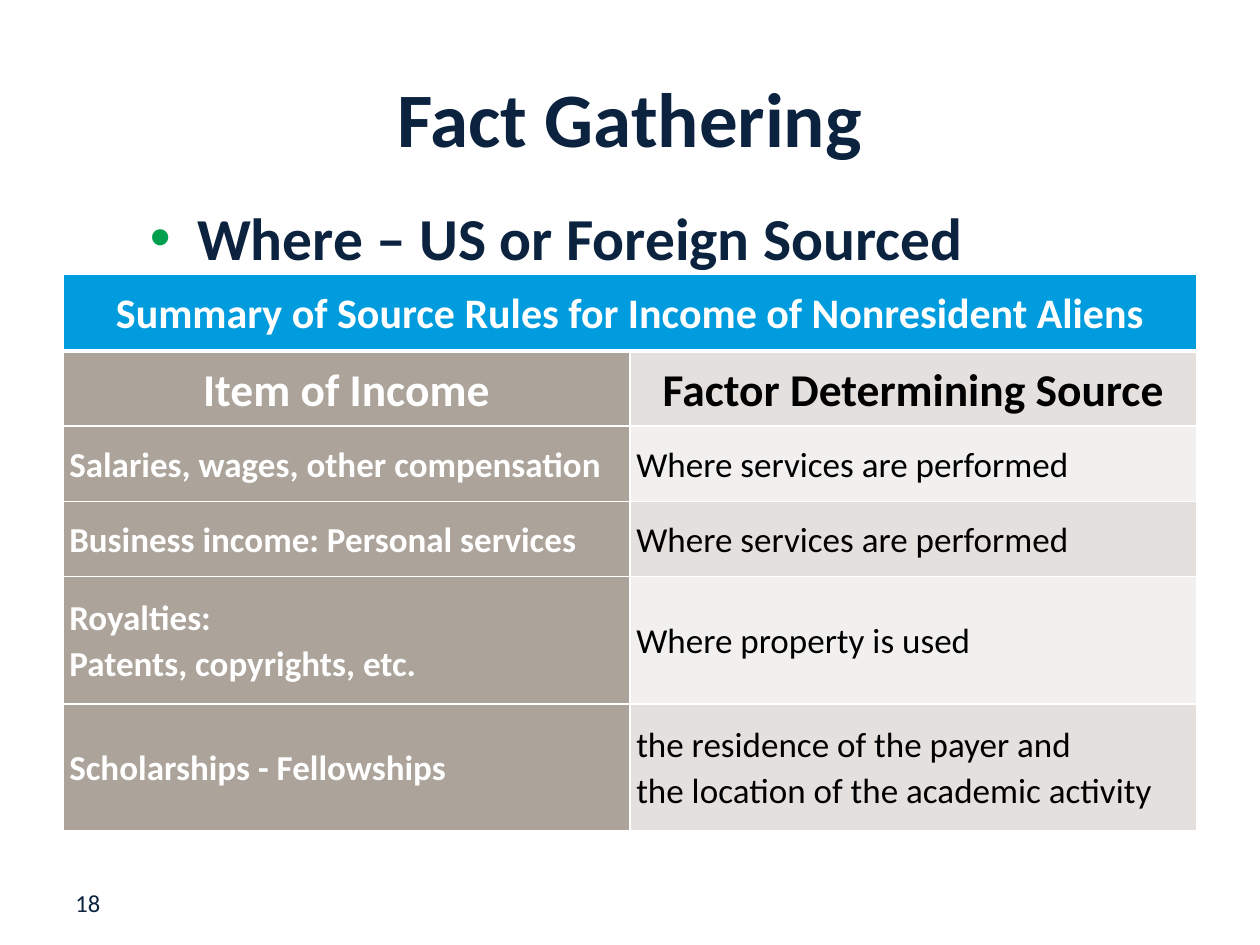
import pptx
import pptx.dml.color
import pptx.enum.text
import pptx.oxml.ns
import pptx.util
from lxml import etree

Pt = pptx.util.Pt
RGBColor = pptx.dml.color.RGBColor
Align = pptx.enum.text.PP_ALIGN
Anchor = pptx.enum.text.MSO_ANCHOR
AutoSize = pptx.enum.text.MSO_AUTO_SIZE
qn = pptx.oxml.ns.qn

NAVY = RGBColor(0x0C, 0x23, 0x40)
GREEN = RGBColor(0x00, 0x9F, 0x4D)
BLUE = RGBColor(0x00, 0x9C, 0xDE)
TAUPE = RGBColor(0xAC, 0xA3, 0x9A)
BAND_DARK = RGBColor(0xE3, 0xE0, 0xDE)
BAND_LIGHT = RGBColor(0xF1, 0xF0, 0xEF)
WHITE = RGBColor(0xFF, 0xFF, 0xFF)
BLACK = RGBColor(0x00, 0x00, 0x00)
FONT = "Calibri"

HEADING = "Summary of Source Rules for Income of Nonresident Aliens"
ROWS = [
    ("Item of Income", ["Factor Determining Source"], 0),
    ("Salaries, wages, other compensation", ["Where services are performed"], 8),
    ("Business income: Personal services", ["Where services are performed"], 0),
    ("Royalties:\nPatents, copyrights, etc.", ["Where property is used"], 8),
    ("Scholarships - Fellowships",
     ["the residence of the payer and", "the location of the academic activity"], 0),
]
ROW_HEIGHTS = [44, 43, 43, 43, 72.75, 72.75]


def add_text(para, text, size, color, bold=False):
    for index, line in enumerate(text.split("\n")):
        if index:
            para.add_line_break()
        span = para.add_run()
        span.text = line
        span.font.name = FONT
        span.font.size = Pt(size)
        span.font.bold = bold
        span.font.color.rgb = color


def place_title(page, left, top, width, height):
    title = page.shapes.title
    title.left, title.top = Pt(left), Pt(top)
    title.width, title.height = Pt(width), Pt(height)
    frame = title.text_frame
    frame.auto_size = AutoSize.NONE
    frame.vertical_anchor = Anchor.MIDDLE
    para = frame.paragraphs[0]
    para.alignment = Align.CENTER
    add_text(para, "Fact Gathering", 44, NAVY, True)


def place_bullet(page, left, top, width, height):
    box = page.shapes.add_textbox(Pt(left), Pt(top), Pt(width), Pt(height))
    box.text_frame.word_wrap = True
    para = box.text_frame.paragraphs[0]
    properties = para._p.get_or_add_pPr()
    properties.set("marL", str(Pt(27)))
    properties.set("indent", str(-Pt(27)))
    bullet_color = etree.SubElement(properties, qn("a:buClr"))
    etree.SubElement(bullet_color, qn("a:srgbClr"), val=str(GREEN))
    etree.SubElement(properties, qn("a:buFont"), typeface="Arial")
    etree.SubElement(properties, qn("a:buChar"), char="•")
    add_text(para, "Where – US or Foreign Sourced", 34, NAVY, True)


def place_page_number(page, left, top, width, height):
    box = page.shapes.add_textbox(Pt(left), Pt(top), Pt(width), Pt(height))
    box.text_frame.word_wrap = True
    box.text_frame.auto_size = AutoSize.SHAPE_TO_FIT_TEXT
    add_text(box.text_frame.paragraphs[0], "18", 14, NAVY)


def set_borders(cell, top, bottom):
    properties = cell._tc.get_or_add_tcPr()
    for side, weight in (("L", 1), ("R", 1), ("T", top), ("B", bottom)):
        line = etree.SubElement(properties, qn("a:ln" + side), w=str(Pt(weight)))
        fill = etree.SubElement(line, qn("a:solidFill"))
        etree.SubElement(fill, qn("a:srgbClr"), val=str(WHITE))


def fill_cell(cell, lines, size, color, bold, fill, align, after=0):
    cell.margin_left = cell.margin_right = Pt(3.6)
    cell.margin_top = cell.margin_bottom = Pt(3.6)
    cell.vertical_anchor = Anchor.MIDDLE
    cell.fill.solid()
    cell.fill.fore_color.rgb = fill
    frame = cell.text_frame
    for index, line in enumerate(lines):
        para = frame.add_paragraph() if index else frame.paragraphs[0]
        para.alignment = align
        para.line_spacing = 1.07
        para.space_after = Pt(after)
        add_text(para, line, size, color, bold)


def place_table(page, left, top, width, height):
    frame = page.shapes.add_table(
        len(ROW_HEIGHTS), 2, Pt(left), Pt(top), Pt(width), Pt(height))
    table = frame.table
    for column in table.columns:
        column.width = Pt(width / 2)
    for index, row_height in enumerate(ROW_HEIGHTS):
        table.rows[index].height = Pt(row_height)
        for cell in table.rows[index].cells:
            set_borders(cell, 3 if index == 1 else 1, 3 if index == 0 else 1)

    table.cell(0, 0).merge(table.cell(0, 1))
    fill_cell(table.cell(0, 0), [HEADING], 24, WHITE, True, BLUE, Align.CENTER)
    for index, (item, factors, after) in enumerate(ROWS, 1):
        is_header = index == 1
        size = 26 if is_header else 20
        align = Align.CENTER if is_header else Align.LEFT
        band = BAND_DARK if index % 2 else BAND_LIGHT
        fill_cell(table.cell(index, 0), [item], size, WHITE, True, TAUPE, align, after)
        fill_cell(table.cell(index, 1), factors, size, BLACK, is_header, band, align, after)


def main():
    deck = pptx.Presentation()
    deck.slide_width, deck.slide_height = Pt(720), Pt(540)
    page = deck.slides.add_slide(deck.slide_layouts[5])
    page.background.fill.solid()
    page.background.fill.fore_color.rgb = WHITE
    place_page_number(page, 36, 504, 156, 24.5)
    place_title(page, 36, 21.6, 648, 90)
    place_bullet(page, 78.5, 111.6, 605.5, 392.4)
    place_table(page, 36, 156.5, 648, sum(ROW_HEIGHTS))
    deck.save("out.pptx")


if __name__ == "__main__":
    main()
